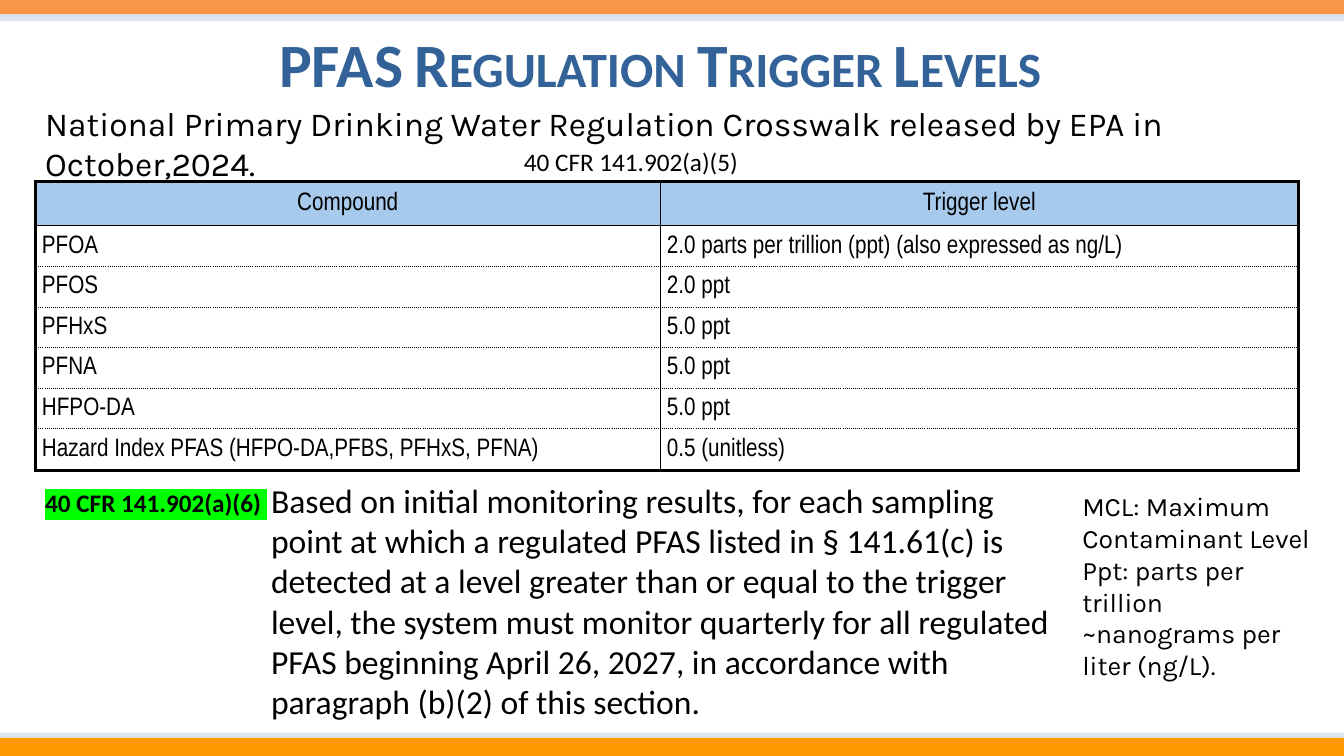
from lxml.etree import SubElement
from pptx import Presentation
from pptx.dml.color import RGBColor
from pptx.enum.shapes import MSO_SHAPE
from pptx.enum.text import MSO_ANCHOR, PP_ALIGN
from pptx.oxml.ns import qn
from pptx.util import Pt

WIDTH, HEIGHT = 960, 540
BLACK = "000000"
LEVELS = [
    ("Compound", "Trigger level"),
    ("PFOA", "2.0 parts per trillion (ppt) (also expressed as ng/L)"),
    ("PFOS", "2.0 ppt"),
    ("PFHxS", "5.0 ppt"),
    ("PFNA", "5.0 ppt"),
    ("HFPO-DA", "5.0 ppt"),
    ("Hazard Index PFAS (HFPO-DA,PFBS, PFHxS, PFNA)", "0.5 (unitless)"),
]


def color(hex_string):
    """Return the colour for a hex string."""
    return RGBColor.from_string(hex_string)


def style_paragraph(paragraph, font_name, size, hex_color=BLACK, bold=False):
    """Set the font of a whole paragraph."""
    font = paragraph.font
    font.name, font.size, font.bold = font_name, Pt(size), bold
    font.color.rgb = color(hex_color)


def add_band(slide, top, height, fill):
    """Add a full-width band without outline."""
    shape = slide.shapes.add_shape(MSO_SHAPE.RECTANGLE, 0, Pt(top), Pt(WIDTH), Pt(height))
    shape.shadow.inherit = False
    shape.fill.solid()
    shape.fill.fore_color.rgb = color(fill)
    shape.line.fill.background()


def add_text(slide, box, lines, font_name, size, hex_color=BLACK, bold=False):
    """Add a wrapping text box and return its paragraphs."""
    frame = slide.shapes.add_textbox(*map(Pt, box)).text_frame
    frame.word_wrap = True
    frame.text = "\n".join(lines)
    for paragraph in frame.paragraphs:
        style_paragraph(paragraph, font_name, size, hex_color, bold)
    return frame.paragraphs


def highlight(paragraph, hex_color):
    """Highlight the first run of a paragraph."""
    properties = paragraph.runs[0].font._element
    mark = SubElement(properties, qn("a:highlight"))
    SubElement(mark, qn("a:srgbClr"), val=hex_color)


def add_border(properties, side, width, dash):
    """Add one black border to the cell properties."""
    line = SubElement(properties, qn(f"a:{side}"), w=str(Pt(width)))
    fill = SubElement(line, qn("a:solidFill"))
    SubElement(fill, qn("a:srgbClr"), val=BLACK)
    SubElement(line, qn("a:prstDash"), val=dash)


def horizontal_border(edge):
    """Return width and dash of the rule above row number edge."""
    if edge in (0, len(LEVELS)):
        return 2, "solid"
    return (1, "solid") if edge == 1 else (0.5, "sysDot")


def fill_cell(cell, text, row, column):
    """Write and format one table cell."""
    header = row == 0
    cell.text = text
    cell.vertical_anchor = MSO_ANCHOR.MIDDLE
    cell.margin_left = Pt(0.75 if header else 4.8)
    cell.margin_right = cell.margin_top = Pt(0.75)
    cell.margin_bottom = 0
    paragraph = cell.text_frame.paragraphs[0]
    paragraph.alignment = PP_ALIGN.CENTER if header else PP_ALIGN.LEFT
    style_paragraph(paragraph, "Arial Narrow", 18)
    properties = cell._tc.get_or_add_tcPr()
    add_border(properties, "lnL", 2 if column == 0 else 0.5, "solid")
    add_border(properties, "lnR", 2 if column == 1 else 0.5, "solid")
    add_border(properties, "lnT", *horizontal_border(row))
    add_border(properties, "lnB", *horizontal_border(row + 1))
    if header:
        cell.fill.solid()
        cell.fill.fore_color.rgb = color("A6C9EC")
    else:
        cell.fill.background()


def add_levels_table(slide):
    """Add the table of trigger levels."""
    frame = slide.shapes.add_table(len(LEVELS), 2, Pt(25.2), Pt(129.6), Pt(902.2), Pt(206.6))
    table = frame.table
    table.first_row = table.horz_banding = False
    for column, width in zip(table.columns, (446.4, 455.8)):
        column.width = Pt(width)
    for row, height in zip(table.rows, [31.7] + [28.95] * 5 + [30.2]):
        row.height = Pt(height)
    for row, texts in enumerate(LEVELS):
        for column, text in enumerate(texts):
            fill_cell(table.cell(row, column), text, row, column)


def main():
    """Build and save the slide."""
    presentation = Presentation()
    presentation.slide_width, presentation.slide_height = Pt(WIDTH), Pt(HEIGHT)
    slide = presentation.slides.add_slide(presentation.slide_layouts[6])

    add_text(slide, (25.2, 70, 923, 36),
             ["National Primary Drinking Water Regulation Crosswalk released by EPA in October,2024."],
             "Karla", 24)
    add_band(slide, 7.2, 7.9, "DCE6F2")
    add_band(slide, 0, 10.1, "F79646")
    add_band(slide, 523.4, 7.2, "DCE6F2")
    add_band(slide, 527, 13, "FF9900")

    title = add_text(slide, (111.6, 15.1, 720, 60.5), ["PFAS Regulation Trigger Levels"],
                     "Calibri", 44, "326297", True)[0]
    title.alignment = PP_ALIGN.CENTER
    title.runs[0].font._element.set("cap", "small")

    add_text(slide, (367.2, 100.8, 480, 28.8), ["40 CFR 141.902(a)(5)"], "Calibri", 18)
    add_text(slide, (766, 346.3, 182.2, 122.4),
             ["MCL: Maximum Contaminant Level",
              "Ppt: parts per trillion ~nanograms per liter (ng/L)."], "Karla", 19)
    add_levels_table(slide)
    citation = add_text(slide, (25.2, 344.9, 481, 28.8), ["40 CFR 141.902(a)(6) "],
                        "Calibri", 18, bold=True)[0]
    highlight(citation, "00FF00")
    add_text(slide, (186.5, 339.1, 579.6, 181.4),
             ["Based on initial monitoring results, for each sampling point at which a regulated "
              "PFAS listed in § 141.61(c) is detected at a level greater than or equal to the "
              "trigger level, the system must monitor quarterly for all regulated PFAS beginning "
              "April 26, 2027, in accordance with paragraph (b)(2) of this section."],
             "Calibri", 24)
    presentation.save("out.pptx")


if __name__ == "__main__":
    main()
